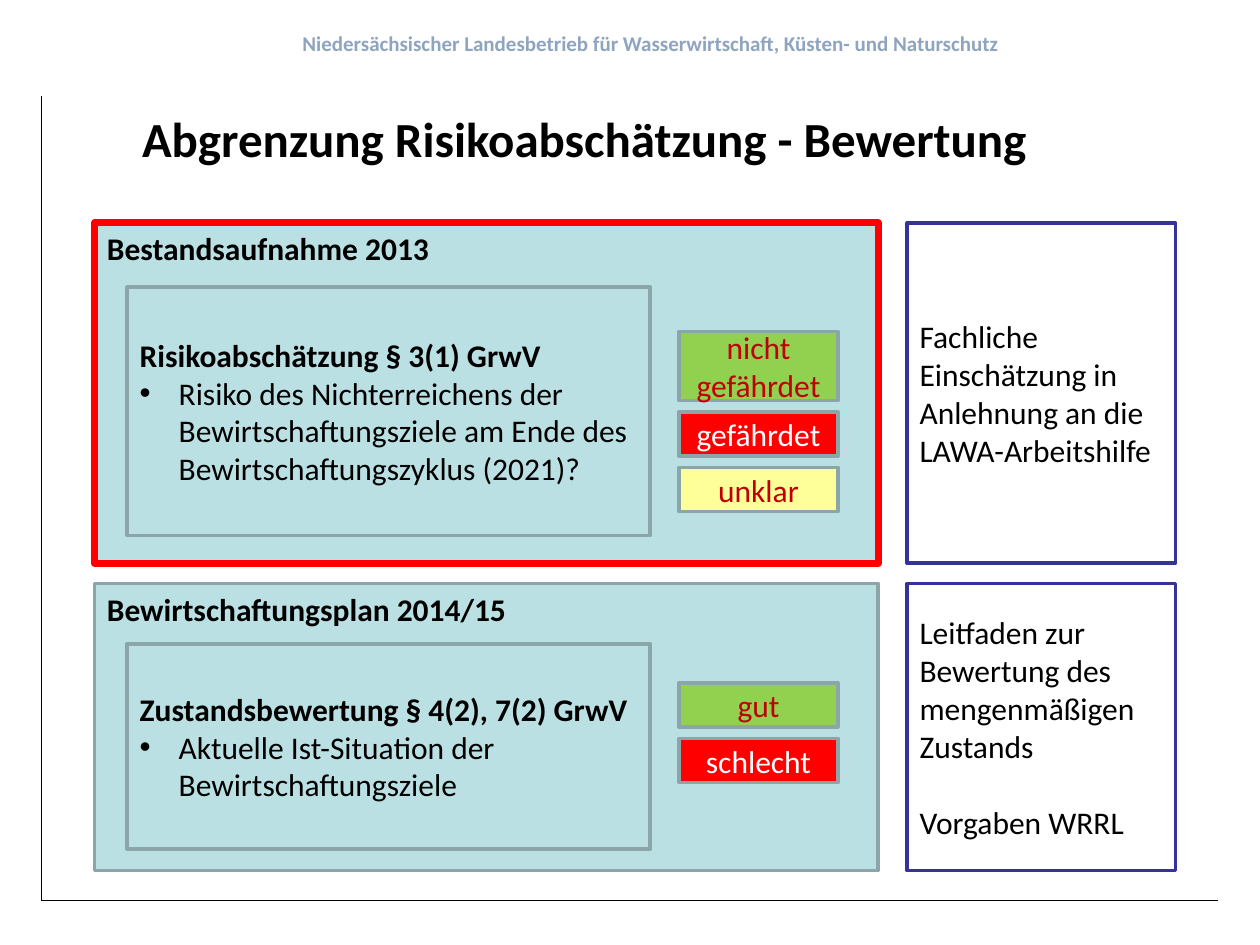
from dataclasses import dataclass

from lxml import etree
from pptx import Presentation
from pptx import util as u
from pptx.dml.color import RGBColor
from pptx.enum import shapes, text
from pptx.oxml.ns import qn

WIDE, HIGH = u.Inches(10), u.Inches(7.5)
LEFT, MID = text.PP_ALIGN.LEFT, text.PP_ALIGN.CENTER
TOP, CENTRE = text.MSO_ANCHOR.TOP, text.MSO_ANCHOR.MIDDLE


@dataclass(frozen=True)
class Theme:
    """Colours, font and type sizes of the slide."""
    font: str = "Calibri"
    head: int = 12
    title: int = 28
    body: int = 18
    ink: str = "000000"
    white: str = "FFFFFF"
    navy: str = "1F497D"
    panel: str = "BBE0E3"
    edge: str = "8AA6A8"
    blue: str = "333399"
    red: str = "FF0000"
    green: str = "92D050"
    yellow: str = "FFFF99"
    dark: str = "C00000"


T = Theme()
PANEL, INNER, PILL, NOTE = (7.5, 62.2), (10.1, 41.5), (53.9, 12.6), (72, 21.3)
UPPER, LOWER = (23.6, 36), (61.73, 30.4)
ROW, GAP = 4.67, 1.2


def rgb(code):
    """Turn a hex code into a colour."""
    return RGBColor.from_string(code)


def place(col, row):
    """Turn a column and a row, in percent of the slide, into a frame."""
    (x, w), (y, h) = col, row
    return [u.Emu(round(n * full / 100)) for n, full in
            ((x, WIDE), (y, HIGH), (w, WIDE), (h, HIGH))]


def box(slide, col, row, fill=None, line=None, width=2):
    """Draw a plain rectangle."""
    item = slide.shapes.add_shape(shapes.MSO_SHAPE.RECTANGLE, *place(col, row))
    item.shadow.inherit = False
    if fill:
        item.fill.solid()
        item.fill.fore_color.rgb = rgb(fill)
    else:
        item.fill.background()
    if line:
        item.line.color.rgb = rgb(line)
        item.line.width = u.Pt(width)
    else:
        item.line.fill.background()
    return item


def write(item, lines, size=T.body, color=T.ink, bold=False, align=LEFT, anchor=CENTRE):
    """Fill a shape with paragraphs of one style."""
    frame = item.text_frame
    frame.word_wrap = True
    frame.vertical_anchor = anchor
    for i, words in enumerate(lines):
        para = frame.paragraphs[0] if i == 0 else frame.add_paragraph()
        para.text = words
        para.alignment = align
        font = para.font
        font.name, font.size, font.bold = T.font, u.Pt(size), bold
        font.color.rgb = rgb(color)
    return frame.paragraphs


def label(slide, col, row, words, **style):
    """Add a line of bold free text."""
    item = slide.shapes.add_textbox(*place(col, row))
    write(item, [words], bold=True, **style)


def rule(slide, start, end):
    """Draw a thin line between two points given in percent."""
    ends = [round(n * full / 100) for point in (start, end)
            for n, full in zip(point, (WIDE, HIGH))]
    item = slide.shapes.add_connector(shapes.MSO_CONNECTOR.STRAIGHT, *ends)
    item.line.color.rgb = rgb(T.ink)
    item.line.width = u.Pt(0.75)
    etree.SubElement(item._element.spPr, qn("a:effectLst"))


def veil(slide, col, row):
    """Lay a half clear white sheet over the header."""
    item = box(slide, col, row, T.white)
    tint = item._element.spPr.find(qn("a:solidFill"))[0]
    etree.SubElement(tint, qn("a:alpha"), val="50000")


def panel(slide, row, words, line):
    """Draw a wide panel with its heading."""
    write(box(slide, PANEL, row, T.panel, line), [words], bold=True, anchor=TOP)


def topic(slide, row, head, point):
    """Draw an inner box with a bold head and one bullet."""
    first, last = write(box(slide, INNER, row, T.panel, T.edge), [head, point])
    first.font.bold = True
    props = last._p.get_or_add_pPr()
    props.set("marL", str(u.Inches(0.31)))
    props.set("indent", str(-u.Inches(0.31)))
    mark = etree.Element(qn("a:buChar"), char="•")
    props.insert(0, mark)
    props.insert(0, etree.Element(qn("a:buFont"), typeface="Arial"))


def stack(slide, top, pills):
    """Stack rating pills with equal gaps."""
    for words, fill, color, high in pills:
        write(box(slide, PILL, (top, high), fill, T.edge), [words], color=color, align=MID)
        top += high + GAP


def note(slide, row, lines):
    """Draw a side note, its paragraphs one line apart."""
    paras = write(box(slide, NOTE, row, T.white, T.blue), lines)
    for para in paras[1:]:
        para.space_before = u.Pt(22)


def main():
    """Build and save the slide."""
    deck = Presentation()
    deck.slide_width, deck.slide_height = WIDE, HIGH
    slide = deck.slides.add_slide(deck.slide_layouts[6])

    rule(slide, (96.7, 95.33), (3.3, 95.33))
    label(slide, (16.2, 70.9), (1.73, 5.73),
          "Niedersächsischer Landesbetrieb für Wasserwirtschaft, Küsten- und Naturschutz",
          size=T.head, color=T.navy, align=MID)
    veil(slide, (2.8, 96.9), (0.67, 11.6))
    rule(slide, (3.3, 95.33), (3.3, 10.13))

    panel(slide, UPPER, "Bestandsaufnahme 2013", T.red)
    panel(slide, LOWER, "Bewirtschaftungsplan 2014/15", T.edge)
    topic(slide, (30.4, 26.27), "Risikoabschätzung § 3(1) GrwV",
          "Risiko des Nichterreichens der Bewirtschaftungsziele am Ende des "
          "Bewirtschaftungszyklus (2021)?")
    topic(slide, (68.13, 21.73), "Zustandsbewertung § 4(2), 7(2) GrwV",
          "Aktuelle Ist-Situation der Bewirtschaftungsziele")
    stack(slide, 72.27, [("gut", T.green, T.dark, ROW),
                         ("schlecht", T.red, T.white, ROW)])
    stack(slide, 35.07, [("nicht gefährdet", T.green, T.dark, 7.33),
                         ("gefährdet", T.red, T.white, ROW),
                         ("unklar", T.yellow, T.dark, ROW)])
    note(slide, LOWER, ["Leitfaden zur Bewertung des mengenmäßigen Zustands",
                        "Vorgaben WRRL"])
    note(slide, UPPER, ["Fachliche Einschätzung in Anlehnung an die LAWA-Arbeitshilfe"])
    box(slide, PANEL, UPPER, line=T.red, width=4)
    label(slide, (10.3, 77), (10.8, 7.6), "Abgrenzung Risikoabschätzung - Bewertung",
          size=T.title, anchor=TOP)

    deck.save("out.pptx")


if __name__ == "__main__":
    main()
